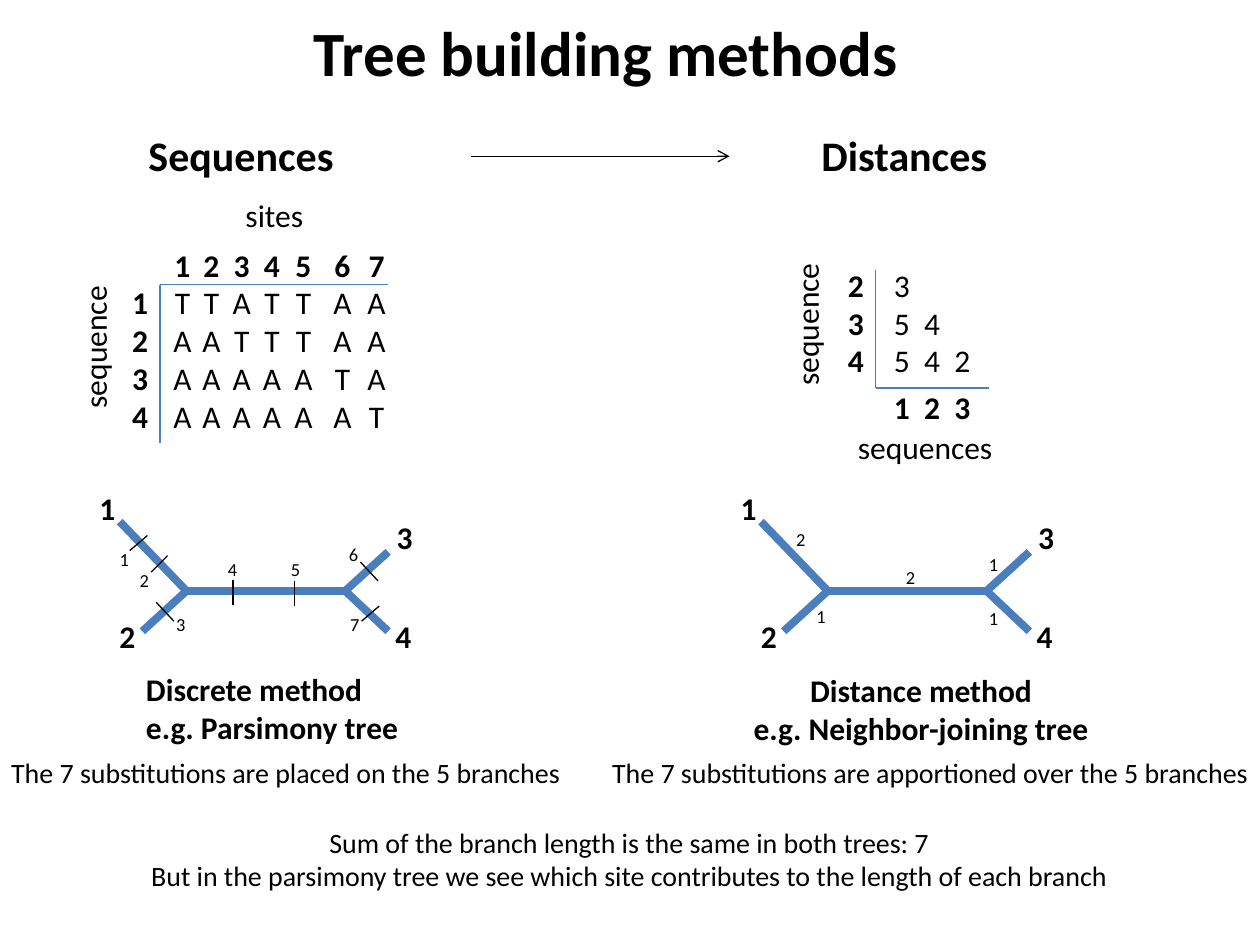
from pptx import Presentation
from pptx.dml.color import RGBColor
from pptx.enum.shapes import MSO_CONNECTOR as CONN
from pptx.enum.text import MSO_ANCHOR, MSO_AUTO_SIZE, PP_ALIGN
from pptx.oxml.ns import qn
from pptx.util import Inches, Pt
from lxml.etree import SubElement

BLACK = RGBColor(0, 0, 0)
BLUE = RGBColor(0x4B, 0x7E, 0xBC)
FONT = "Calibri"
TREE_SHIFT = 5.09


class Builder:
    def __init__(self, slide):
        self.s = slide

    def style(self, p, size, bold=None, align=PP_ALIGN.LEFT):
        p.alignment = align
        f = p.font
        f.name, f.size, f.bold = FONT, Pt(size), bold
        f.color.rgb = BLACK

    def fill(self, sp, lines, size, bold=False, align=PP_ALIGN.LEFT):
        tf = sp.text_frame
        tf.word_wrap = False
        tf.auto_size = MSO_AUTO_SIZE.SHAPE_TO_FIT_TEXT
        tf.vertical_anchor = MSO_ANCHOR.TOP
        tf.text = "\n".join(lines)
        for p in tf.paragraphs:
            self.style(p, size, bold, align)

    def title(self, text, x, y, w, h):
        sp = self.s.shapes.title
        sp.left, sp.top, sp.width, sp.height = map(Inches, (x, y, w, h))
        self.fill(sp, [text], 36, True)

    def box(self, x, y, w, h):
        return self.s.shapes.add_textbox(*map(Inches, (x, y, w, h)))

    def text(self, x, y, w, h, *lines, size=18, bold=False,
             align=PP_ALIGN.LEFT, vertical=False):
        sp = self.box(x, y, w, h)
        self.fill(sp, lines, size, bold, align)
        if vertical:
            sp.text_frame._txBody.bodyPr.set("vert", "vert270")

    def matrix(self, x, y, w, h, rows, stops):
        tf = self.box(x, y, w, h).text_frame
        tf.word_wrap = True
        for i, (label, cells) in enumerate(rows):
            p = tf.paragraphs[0] if i == 0 else tf.add_paragraph()
            self.style(p, 18)
            if label:
                r = p.add_run()
                r.text, r.font.bold = label, True
            elif i:
                p.space_before = Pt(5)
            r = p.add_run()
            r.text = "".join("\t" + c for c in cells)
            r.font.bold = not label
            tabs = SubElement(p._p.get_or_add_pPr(), qn("a:tabLst"))
            p._p.pPr.insert_element_before(tabs, "a:defRPr")
            for stop in stops:
                SubElement(tabs, qn("a:tab"), pos=str(Inches(stop)), algn="ctr")

    def line(self, x1, y1, x2, y2, color=BLACK, width=0.75, arrow=False):
        c = self.s.shapes.add_connector(CONN.STRAIGHT, *map(Inches, (x1, y1, x2, y2)))
        c.line.color.rgb, c.line.width = color, Pt(width)
        if arrow:
            SubElement(c.line._get_or_add_ln(), qn("a:tailEnd"), type="arrow")
        SubElement(c._element.spPr, qn("a:effectLst"))

    def tree(self, dx, branch_labels):
        left, right = (1.48, 4.69), (2.74, 4.69)
        branches = [((0.95, 4.14), left), (left, right), (right, (3.08, 4.38)),
                    (right, (3.08, 5.01)), ((1.13, 5.01), left)]
        for (x1, y1), (x2, y2) in branches:
            self.line(x1 + dx, y1, x2 + dx, y2, BLUE, 4.5)
        tips = [(0.69, 3.83), (0.85, 4.85), (3.05, 4.06), (3.04, 4.85)]
        for n, (x, y) in enumerate(tips, 1):
            self.text(x + dx, y, 0.33, 0.4, str(n), bold=True)
        for label, x, y in branch_labels:
            self.text(x, y, 0.28, 0.28, label, size=10.5)


def main():
    prs = Presentation()
    prs.slide_width, prs.slide_height = Inches(10), Inches(7.5)
    b = Builder(prs.slides.add_slide(prs.slide_layouts[5]))

    b.title("Tree building methods", 2.39, 0.06, 4.89, 0.71)
    b.text(1.08, 0.98, 1.69, 0.5, "Sequences", size=24, bold=True)
    b.text(6.42, 0.98, 1.53, 0.5, "Distances", size=24, bold=True)
    b.line(3.74, 1.24, 5.79, 1.24, arrow=True)

    b.matrix(0.95, 1.9, 2.26, 1.62,
             [("", "1234567"), ("1", "TTATTAA"), ("2", "AATTTAA"),
              ("3", "AAAAATA"), ("4", "AAAAAAT")],
             [0.4, 0.63, 0.87, 1.11, 1.36, 1.67, 1.94])
    b.matrix(6.63, 2.06, 1.22, 1.68,
             [("2", "3"), ("3", "54"), ("4", "542"), ("", "123")],
             [0.43 + 0.24 * i for i in range(3)])
    for axis in [(6.95, 2.14, 6.95, 3.08), (6.95, 3.08, 7.85, 3.08),
                 (1.27, 2.26, 1.27, 3.52), (1.27, 2.26, 3.08, 2.26)]:
        b.line(*axis, BLUE)
    b.text(0.55, 2.26, 0.5, 1.08, "sequence", vertical=True)
    b.text(6.2, 2.08, 0.5, 1.08, "sequence", vertical=True)
    b.text(1.85, 1.51, 0.66, 0.4, "sites")
    b.text(6.71, 3.35, 1.28, 0.4, "sequences")

    b.tree(0, [("1", 0.85, 4.3), ("2", 1.01, 4.47), ("3", 1.3, 4.82),
               ("4", 1.71, 4.38), ("5", 2.21, 4.38), ("6", 2.67, 4.26),
               ("7", 2.68, 4.82)])
    b.tree(TREE_SHIFT, [("1", 6.38, 4.75), ("2", 6.22, 4.14), ("1", 7.75, 4.34),
                        ("1", 7.75, 4.77), ("2", 7.09, 4.44)])
    for tick in [(1.03, 4.37, 1.17, 4.25), (1.2, 4.54, 1.33, 4.41),
                 (2.87, 4.93, 3.01, 4.81), (2.86, 4.46, 3, 4.61),
                 (1.24, 4.78, 1.38, 4.93), (1.85, 4.6, 1.85, 4.8),
                 (2.34, 4.61, 2.34, 4.81)]:
        b.line(*tick)

    b.text(1.06, 5.27, 2.22, 0.71, "Discrete method", "e.g. Parsimony tree", bold=True)
    b.text(5.87, 5.28, 2.88, 0.71, "Distance method", "e.g. Neighbor-joining tree",
           bold=True, align=PP_ALIGN.CENTER)
    b.text(-0.01, 5.95, 4.62, 0.37,
           "The 7 substitutions are placed on the 5 branches", size=16)
    b.text(4.76, 5.95, 5.32, 0.37,
           "The 7 substitutions are apportioned over the 5 branches", size=16)
    b.text(1.05, 6.5, 7.89, 0.64,
           "Sum of the branch length is the same in both trees: 7",
           "But in the parsimony tree we see which site contributes to the length of each branch",
           size=16, align=PP_ALIGN.CENTER)
    prs.save("out.pptx")


if __name__ == "__main__":
    main()
